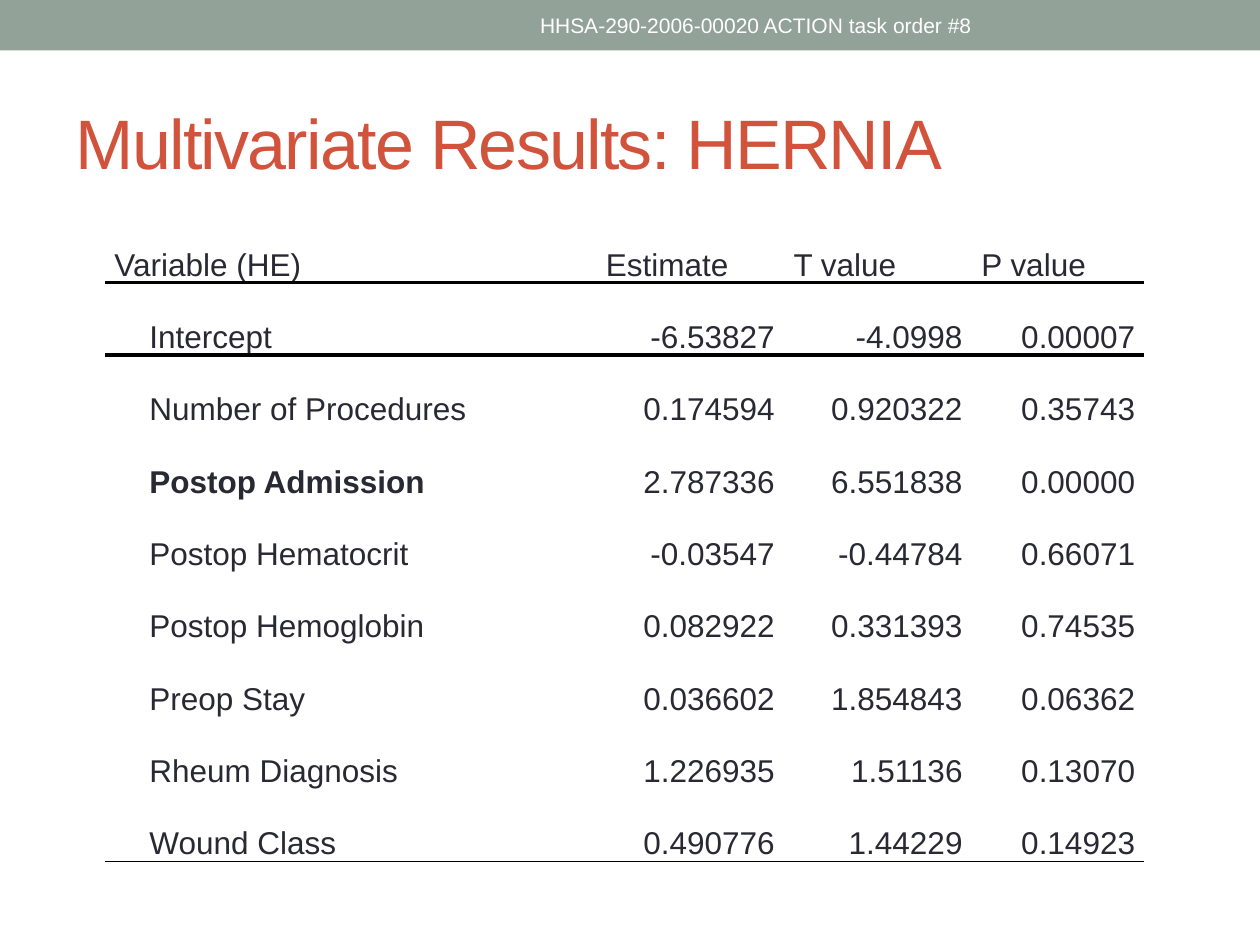
from lxml.etree import SubElement, fromstring
from pptx import Presentation
from pptx.dml.color import RGBColor
from pptx.enum.shapes import MSO_SHAPE as SHAPE
from pptx.enum.text import MSO_ANCHOR as ANCHOR, PP_ALIGN as ALIGN
from pptx.oxml.ns import nsdecls, qn
from pptx.util import Pt

WHITE = RGBColor(0xFF, 0xFF, 0xFF)
SAGE = RGBColor(0x93, 0xA2, 0x99)
RUST = RGBColor(0xD2, 0x53, 0x3C)
INK = RGBColor(0x29, 0x29, 0x34)
BLACK = RGBColor(0, 0, 0)
NO_GRID_STYLE = "{2D5ABB26-0587-4C30-8999-92F81FD0307C}"

HEADER = ("Variable (HE)", "Estimate", "T value", "P value")
RESULTS = [
    ("Intercept", "-6.53827", "-4.0998", "0.00007"),
    ("Number of Procedures", "0.174594", "0.920322", "0.35743"),
    ("Postop Admission", "2.787336", "6.551838", "0.00000"),
    ("Postop Hematocrit", "-0.03547", "-0.44784", "0.66071"),
    ("Postop Hemoglobin", "0.082922", "0.331393", "0.74535"),
    ("Preop Stay", "0.036602", "1.854843", "0.06362"),
    ("Rheum Diagnosis", "1.226935", "1.51136", "0.13070"),
    ("Wound Class", "0.490776", "1.44229", "0.14923"),
]
SIGNIFICANT = "Postop Admission"


class SlideBuilder:
    font = "Arial"

    def __init__(self, prs):
        self.s = prs.slides.add_slide(prs.slide_layouts[5])

    def style(self, p, size, color, align=ALIGN.LEFT, bold=False):
        p.alignment = align
        p.font.name, p.font.size, p.font.bold = self.font, Pt(size), bold
        p.font.color.rgb = color

    def band(self, x, y, w, h, color):
        sp = self.s.shapes.add_shape(SHAPE.RECTANGLE, Pt(x), Pt(y), Pt(w), Pt(h))
        sp.shadow.inherit = False
        sp.fill.solid()
        sp.fill.fore_color.rgb = color
        sp.line.fill.background()

    def title(self, text, x, y, w, h):
        sp = self.s.shapes.title
        sp.left, sp.top, sp.width, sp.height = Pt(x), Pt(y), Pt(w), Pt(h)
        tf = sp.text_frame
        tf.text, tf.vertical_anchor = text, ANCHOR.MIDDLE
        p = tf.paragraphs[0]
        self.style(p, 40, RUST)
        # Tighten the letter spacing by one point
        p.runs[0].font._element.set("spc", "-100")

    def text(self, text, x, y, w, h):
        tf = self.s.shapes.add_textbox(Pt(x), Pt(y), Pt(w), Pt(h)).text_frame
        tf.word_wrap, tf.vertical_anchor = True, ANCHOR.MIDDLE
        tf.text = text
        self.style(tf.paragraphs[0], 12, WHITE, ALIGN.CENTER)

    def border(self, cell, side, width):
        ln = fromstring(f'<a:{side} {nsdecls("a")} w="{Pt(width)}"/>')
        fill = SubElement(ln, qn("a:solidFill"))
        SubElement(fill, qn("a:srgbClr"), val=str(BLACK))
        cell._tc.get_or_add_tcPr().insert(0, ln)

    def cell(self, cell, text, align, bold, indent):
        cell.fill.background()
        cell.vertical_anchor = ANCHOR.BOTTOM
        cell.margin_left = cell.margin_right = Pt(5.4)
        cell.margin_top = cell.margin_bottom = 0
        cell.text = text
        p = cell.text_frame.paragraphs[0]
        self.style(p, 18, INK, align, bold)
        p.line_spacing = 1.15
        if indent:
            p._p.get_or_add_pPr().set("indent", str(Pt(indent)))

    def table(self, rows, x, y, widths, row_height):
        frame = self.s.shapes.add_table(len(rows), len(widths), Pt(x), Pt(y),
                                        Pt(sum(widths)), Pt(row_height * len(rows)))
        table = frame.table
        table.first_row = table.horz_banding = False
        table._tbl.tblPr.find(qn("a:tableStyleId")).text = NO_GRID_STYLE
        for col, width in zip(table.columns, widths):
            col.width = Pt(width)
        rules = {0: ("lnB", 2.25), 1: ("lnT", 2.25), len(rows) - 1: ("lnB", 1)}
        for i, row in enumerate(rows):
            table.rows[i].height = Pt(row_height)
            for j, text in enumerate(row):
                cell = table.cell(i, j)
                align = ALIGN.RIGHT if i and j else ALIGN.LEFT
                self.cell(cell, text, align, text == SIGNIFICANT,
                          indent=20 if i and not j else 0)
                if i in rules:
                    self.border(cell, *rules[i])


def main():
    prs = Presentation()
    prs.slide_width, prs.slide_height = Pt(720), Pt(540)
    b = SlideBuilder(prs)

    # Header band and title
    b.band(0, 0, 720, 28.8, SAGE)
    b.title("Multivariate Results: HERNIA", 36, 41.76, 648, 77.76)

    # Regression results
    b.table([HEADER, *RESULTS], 60, 120.24, (280.8, 107.3, 107.3, 98.6), 41.35)

    # Contract number in the band
    b.text("HHSA-290-2006-00020 ACTION task order #8", 270, 1.44, 324, 25.92)

    prs.save("out.pptx")


if __name__ == "__main__":
    main()
